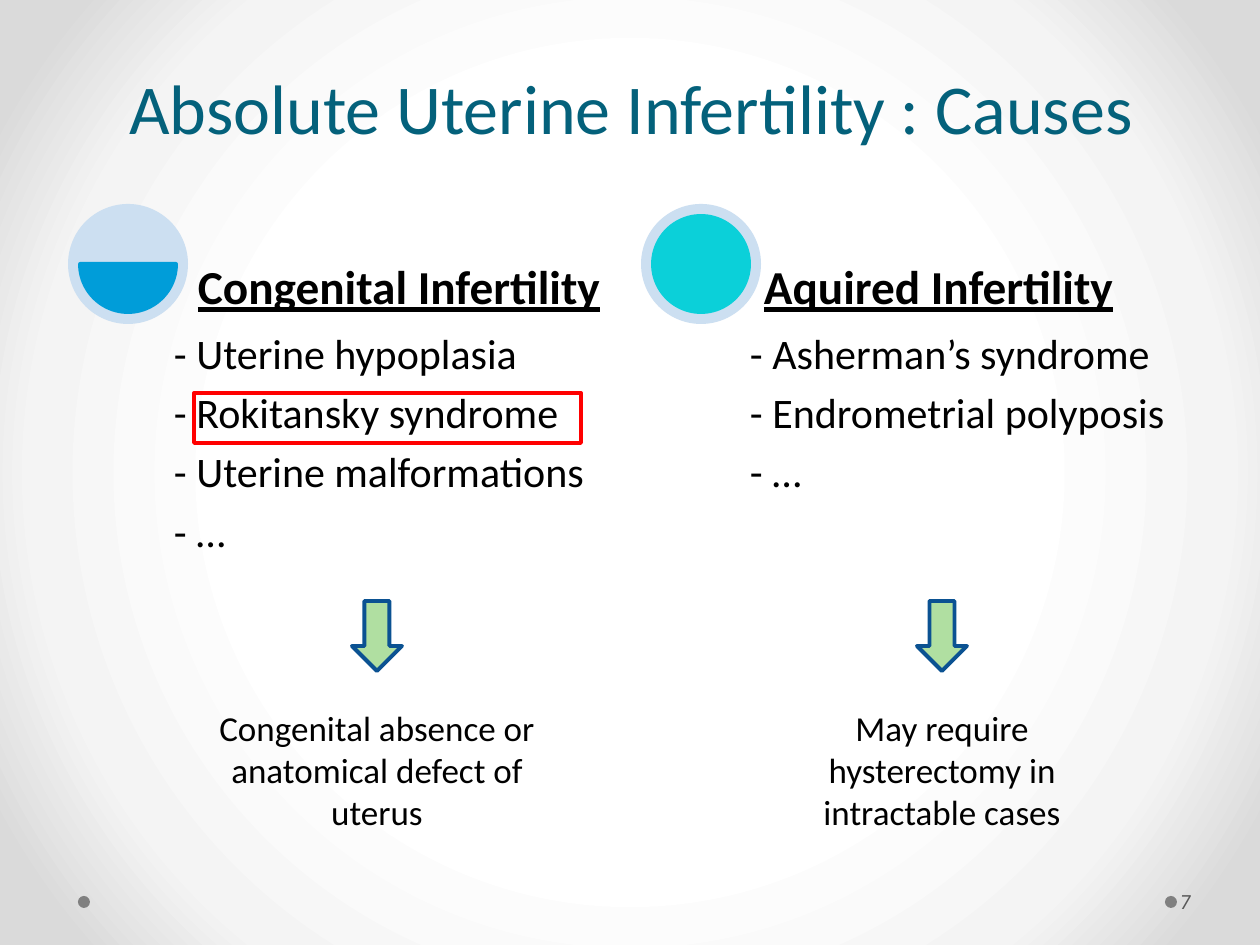
"""Build the slide on the causes of absolute uterine infertility."""
from lxml import etree
from pptx import Presentation
from pptx.dml.color import RGBColor
from pptx.enum.shapes import MSO_SHAPE
from pptx.enum.text import MSO_ANCHOR, MSO_AUTO_SIZE, PP_ALIGN
from pptx.oxml import parse_xml
from pptx.oxml.ns import nsdecls, qn
from pptx.util import Emu, Pt

OVAL, CHORD = MSO_SHAPE.OVAL, MSO_SHAPE.CHORD
ARROW, RECT = MSO_SHAPE.DOWN_ARROW, MSO_SHAPE.RECTANGLE
TOP, MID, LOW = MSO_ANCHOR.TOP, MSO_ANCHOR.MIDDLE, MSO_ANCHOR.BOTTOM
LEFT, CENTER = PP_ALIGN.LEFT, PP_ALIGN.CENTER
FIXED = MSO_AUTO_SIZE.NONE
SCALE = 914400 / 126

COLORS = {
    "title": "04617B", "text": "000000", "number": "595959", "dot": "808080",
    "ring": "CCDFF1", "blue": "009DD9", "teal": "0BD0D9",
    "arrow": "B0DFA1", "edge": "0B5292", "frame": "FF0000",
}
STOPS = [(50, "FFFFFF"), (76, "F4F4F4"), (92, "DADADA")]
TITLE = "Absolute Uterine Infertility : Causes"
CAUSES = [
    {
        "head": "Congenital Infertility", "head_at": (189, 204, 432, 120),
        "items": ["- Uterine hypoplasia", "- Rokitansky syndrome",
                  "- Uterine malformations", "- …"],
        "list_at": (165, 324, 451, 504),
        "note": "Congenital absence or anatomical defect of uterus",
        "ring_x": 68, "mid_x": 377, "color": "blue", "angles": (0, 108),
    },
    {
        "head": "Aquired Infertility", "head_at": (755, 204, 437, 120),
        "items": ["- Asherman’s syndrome", "- Endrometrial polyposis", "- …"],
        "list_at": (741, 324, 441, 504),
        "note": "May require hysterectomy in intractable cases",
        "ring_x": 641, "mid_x": 942, "color": "teal", "angles": (162, 162),
    },
]


def px(num):
    return Emu(round(num * SCALE))


def rgb(name):
    return RGBColor.from_string(COLORS[name])


def place(shape, box):
    shape.left, shape.top, shape.width, shape.height = map(px, box)


def draw(slide, kind, box, fill=None, line=None):
    shape = slide.shapes.add_shape(kind, *map(px, box))
    shape.shadow.inherit = False
    if fill:
        shape.fill.solid()
        shape.fill.fore_color.rgb = rgb(fill)
    else:
        shape.fill.background()
    if line:
        shape.line.color.rgb = rgb(line)
        shape.line.width = Pt(2.25)
    else:
        shape.line.fill.background()
    return shape


def write(shape, lines, size, color="text", font="Calibri", align=LEFT,
          anchor=TOP, pad=(13, 6), bold=False, under=False, space=None, after=0):
    frame = shape.text_frame
    frame.word_wrap, frame.auto_size = True, FIXED
    frame.vertical_anchor = anchor
    frame.margin_left = frame.margin_right = px(pad[0])
    frame.margin_top = frame.margin_bottom = px(pad[1])
    frame.text = "\n".join(lines)
    for para in frame.paragraphs:
        para.alignment, para.line_spacing = align, space
        para.space_before, para.space_after = Pt(0), Pt(after)
        para.font.name, para.font.size = font, Pt(size)
        para.font.bold, para.font.underline = bold, under
        para.font.color.rgb = rgb(color)
        props = para._p.get_or_add_pPr()
        props.set("marL", "0")
        props.set("indent", "0")
        mark = etree.Element(qn("a:buNone"))
        props.insert_element_before(mark, "a:tabLst", "a:defRPr", "a:extLst")


def label(slide, box, *args, **style):
    write(slide.shapes.add_textbox(*map(px, box)), *args, **style)


def paint(slide):
    stops = "".join(f'<a:gs pos="{pos * 1000}"><a:srgbClr val="{val}"/></a:gs>'
                    for pos, val in STOPS)
    slide._element.cSld.insert(0, parse_xml(
        f'<p:bg {nsdecls("p", "a")}><p:bgPr><a:gradFill rotWithShape="1">'
        f'<a:gsLst>{stops}</a:gsLst><a:path path="circle">'
        '<a:fillToRect l="50000" t="50000" r="50000" b="50000"/></a:path>'
        '</a:gradFill><a:effectLst/></p:bgPr></p:bg>'))


def add_cause(slide, cause, head, body):
    place(head, cause["head_at"])
    write(head, [cause["head"]], 27, anchor=LOW, pad=(9, 9),
          bold=True, under=True, space=0.9, after=9)
    place(body, cause["list_at"])
    write(body, cause["items"], 24, pad=(9, 9), space=0.9, after=8)

    left, mid, color = cause["ring_x"], cause["mid_x"], cause["color"]
    draw(slide, OVAL, (left, 204, 120, 120), "ring")
    disc = draw(slide, CHORD, (left + 12, 216, 96, 96), color, color)
    for pos, angle in enumerate(cause["angles"]):
        disc.adjustments[pos] = angle
    draw(slide, ARROW, (mid - 25, 601, 50, 70), "arrow", "edge")
    label(slide, (mid - 193, 701, 386, 140), [cause["note"]], 20, align=CENTER)


def main():
    deck = Presentation()
    deck.slide_width, deck.slide_height = px(1260), px(945)
    slide = deck.slides.add_slide(deck.slide_layouts[4])
    paint(slide)
    title, *parts = slide.placeholders
    place(title, (64, 10, 1134, 145))
    write(title, [TITLE], 40, "title", align=CENTER, anchor=LOW, space=Pt(58))
    for left in (78, 1165):
        draw(slide, OVAL, (left, 896, 12, 12), "dot")
    for cause, head, body in zip(CAUSES, parts[::2], parts[1::2]):
        add_cause(slide, cause, head, body)
    draw(slide, RECT, (194, 393, 387, 50), line="frame")
    label(slide, (1177, 876, 77, 50), ["7"], 12, "number", "League Spartan",
          anchor=MID, pad=(4, 6))
    deck.save("out.pptx")


if __name__ == "__main__":
    main()
